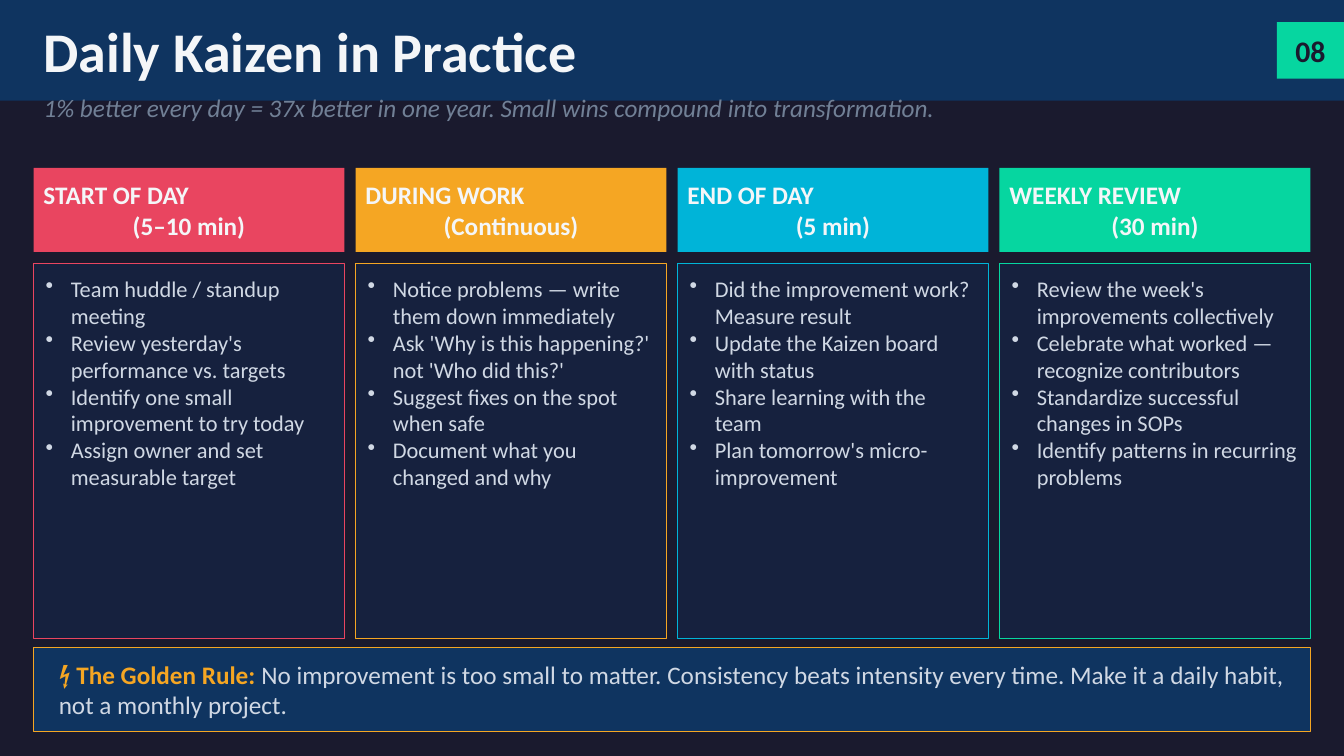
import pptx
import pptx.util
import pptx.dml.color
import pptx.enum.shapes
import pptx.enum.text
import pptx.oxml.ns
import lxml.etree

RGB = pptx.dml.color.RGBColor
Inches = pptx.util.Inches
LEFT = pptx.enum.text.PP_ALIGN.LEFT
CENTER = pptx.enum.text.PP_ALIGN.CENTER
TOP = pptx.enum.text.MSO_ANCHOR.TOP
MIDDLE = pptx.enum.text.MSO_ANCHOR.MIDDLE

NIGHT = RGB(0x1A, 0x1A, 0x2E)
NAVY = RGB(0x0F, 0x34, 0x60)
PANEL = RGB(0x16, 0x21, 0x3E)
RED = RGB(0xE9, 0x45, 0x60)
AMBER = RGB(0xF5, 0xA6, 0x23)
CYAN = RGB(0x00, 0xB4, 0xD8)
GREEN = RGB(0x06, 0xD6, 0xA0)
WHITE = RGB(0xF4, 0xF6, 0xF8)
PALE = RGB(0xD0, 0xD8, 0xE4)
GREY = RGB(0x71, 0x80, 0x96)

TITLE = "Daily Kaizen in Practice"
NUMBER = "08"
SUBTITLE = "1% better every day = 37x better in one year. Small wins compound into transformation."
RULE_LABEL = "⚡ The Golden Rule: "
RULE = ("No improvement is too small to matter. Consistency beats intensity every time. "
        "Make it a daily habit, not a monthly project.")
STAGES = [
    ("START OF DAY", "(5–10 min)", RED, [
        "Team huddle / standup meeting",
        "Review yesterday's performance vs. targets",
        "Identify one small improvement to try today",
        "Assign owner and set measurable target"]),
    ("DURING WORK", "(Continuous)", AMBER, [
        "Notice problems — write them down immediately",
        "Ask 'Why is this happening?' not 'Who did this?'",
        "Suggest fixes on the spot when safe",
        "Document what you changed and why"]),
    ("END OF DAY", "(5 min)", CYAN, [
        "Did the improvement work? Measure result",
        "Update the Kaizen board with status",
        "Share learning with the team",
        "Plan tomorrow's micro-improvement"]),
    ("WEEKLY REVIEW", "(30 min)", GREEN, [
        "Review the week's improvements collectively",
        "Celebrate what worked — recognize contributors",
        "Standardize successful changes in SOPs",
        "Identify patterns in recurring problems"]),
]

W, H = 13.33, 7.5
MARGIN = W / 40
GAP = 0.11
ROW = H / 9
CONTENT_W = W - 2 * MARGIN
COL_W = (CONTENT_W - GAP * (len(STAGES) - 1)) / len(STAGES)
HEAD_Y = 2 * ROW
BODY_Y = HEAD_Y + ROW + GAP
BODY_H = 3.72
RULE_Y = 6.42


def add_bullet(p):
    pPr = p._p.get_or_add_pPr()
    pPr.set("marL", str(Inches(0.25)))
    pPr.set("indent", str(Inches(-0.25)))
    lxml.etree.SubElement(pPr, pptx.oxml.ns.qn("a:buChar")).set("char", "•")


def write(sp, text, size=18, color=WHITE, bold=False, italic=False, align=LEFT,
          anchor=MIDDLE, insets=(0.1, 0.05, 0.1, 0.05), bullet=False, new=True):
    tf = sp.text_frame
    tf.word_wrap = True
    tf.auto_size = pptx.enum.text.MSO_AUTO_SIZE.NONE
    tf.vertical_anchor = anchor
    tf.margin_left, tf.margin_top, tf.margin_right, tf.margin_bottom = map(Inches, insets)
    p = tf.paragraphs[-1]
    if new and p.runs:
        p = tf.add_paragraph()
    if bullet:
        add_bullet(p)
    p.alignment = align
    r = p.add_run()
    r.text = text
    r.font.name = "Calibri"
    r.font.size = pptx.util.Pt(size)
    r.font.color.rgb = color
    r.font.bold = bold
    r.font.italic = italic


def add_box(s, x, y, w, h, fill, line=None):
    sp = s.shapes.add_shape(pptx.enum.shapes.MSO_SHAPE.RECTANGLE, *map(Inches, (x, y, w, h)))
    sp.shadow.inherit = False
    sp.fill.solid()
    sp.fill.fore_color.rgb = fill
    if line is None:
        sp.line.fill.background()
    else:
        sp.line.color.rgb = line
        sp.line.width = pptx.util.Pt(0.75)
    return sp


def add_stage(s, x, name, time, color, steps):
    head = add_box(s, x, HEAD_Y, COL_W, ROW, color)
    write(head, name, bold=True)
    write(head, time, bold=True, align=CENTER)
    body = add_box(s, x, BODY_Y, COL_W, BODY_H, PANEL, color)
    for step in steps:
        write(body, step, size=16, color=PALE, anchor=TOP,
              insets=(0.12, 0.12, 0.12, 0.05), bullet=True)


def main():
    prs = pptx.Presentation()
    prs.slide_width, prs.slide_height = Inches(W), Inches(H)
    s = prs.slides.add_slide(prs.slide_layouts[5])
    s.background.fill.solid()
    s.background.fill.fore_color.rgb = NIGHT

    title = s.shapes.title
    title.left, title.top, title.width, title.height = map(
        Inches, (MARGIN, GAP, W * 5 / 6, 0.78))
    write(title, TITLE, size=40, bold=True)
    band = add_box(s, 0, 0, W, 1, NAVY)
    title._element.addprevious(band._element)

    badge = add_box(s, W * 0.95, 0.22, W * 0.05, 0.56, GREEN)
    write(badge, NUMBER, size=21.3, color=NIGHT, bold=True, align=CENTER)
    subtitle = s.shapes.add_textbox(*map(Inches, (MARGIN, 0.87, CONTENT_W, 0.4)))
    write(subtitle, SUBTITLE, color=GREY, italic=True)

    for i, stage in enumerate(STAGES):
        add_stage(s, MARGIN + i * (COL_W + GAP), *stage)

    rule = add_box(s, MARGIN, RULE_Y, CONTENT_W, ROW, NAVY, AMBER)
    insets = (0.25, 0.05, 0.1, 0.05)
    write(rule, RULE_LABEL, color=AMBER, bold=True, insets=insets)
    write(rule, RULE, color=PALE, insets=insets, new=False)
    prs.save("out.pptx")


if __name__ == "__main__":
    main()
